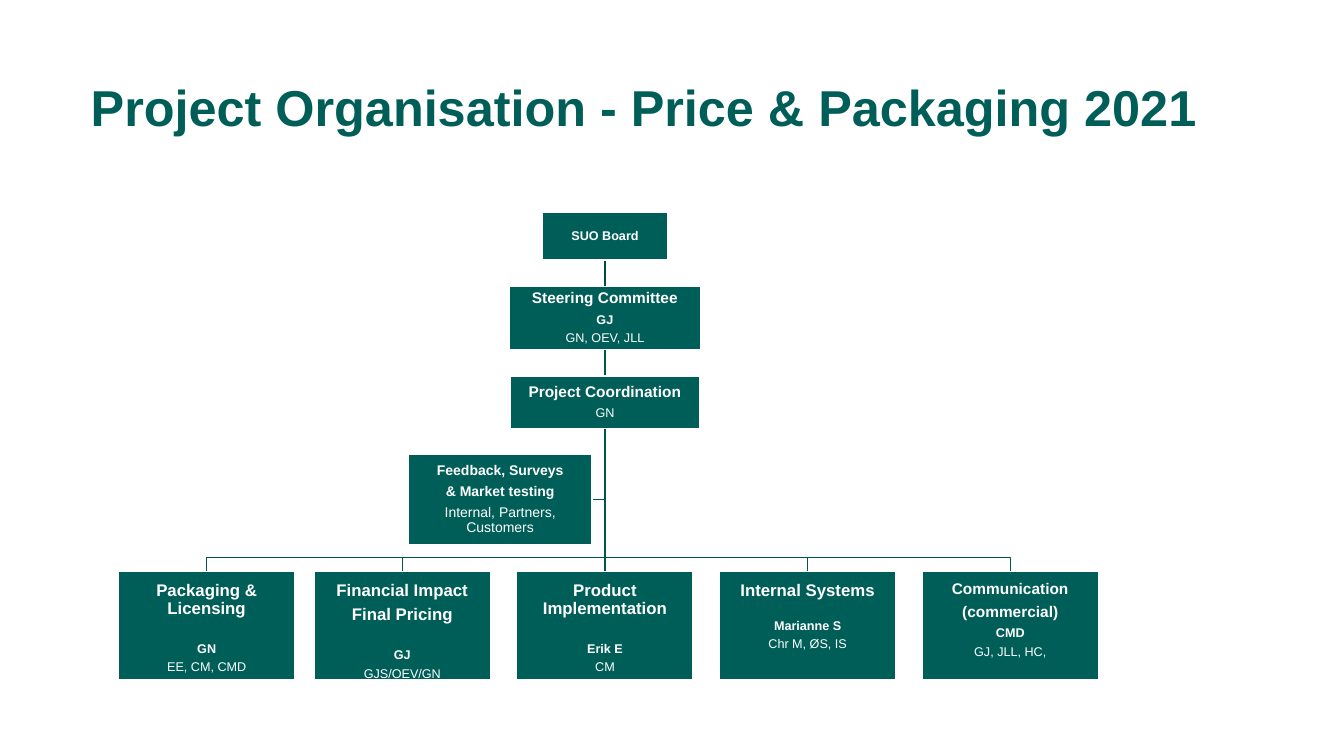
"""Build the project organisation chart slide."""
from dataclasses import dataclass
from typing import Any

import lxml.etree
import pptx
import pptx.dml.color
import pptx.enum.shapes
import pptx.enum.text
import pptx.oxml.ns
import pptx.util

Inches = pptx.util.Inches
Pt = pptx.util.Pt
ALIGN = pptx.enum.text.PP_ALIGN
ANCHOR = pptx.enum.text.MSO_ANCHOR

GREEN, EDGE, DEEP, WHITE = "005E58", "005550", "004B46", "FFFFFF"
AXIS = 6.0
BUS = 5.53
TOP, WIDE, HIGH = 5.67, 1.75, 1.07
BLANK = 12.9
SIDES = ("left", "top", "right", "bottom")


@dataclass
class Line:
    """One paragraph, with any gap above it in points."""
    text: str
    size: int = 9
    bold: bool = False
    gap: float = 0


@dataclass
class Box:
    """One unit of the chart, placed by its centre line and top."""
    mid: float
    top: float
    width: float
    height: float
    lines: list[Line]
    pad: float = 0.01
    anchor: Any = ANCHOR.MIDDLE


def leaf(mid: float, *lines: Line) -> Box:
    """Describe a unit of the bottom row."""
    return Box(mid, TOP, WIDE, HIGH, list(lines), 0.1, ANCHOR.TOP)


BOARD = Box(AXIS, 2.11, 1.25, 0.47, [Line("SUO Board", 9, True)])
STEER = Box(AXIS, 2.84, 1.9, 0.63, [
    Line("Steering Committee", 11, True), Line("GJ", 9, True), Line("GN, OEV, JLL")])
COORD = Box(AXIS, 3.73, 1.88, 0.52, [Line("Project Coordination", 11, True), Line("GN")])
SURVEY = Box(4.96, 4.51, 1.82, 0.89, [
    Line("Feedback, Surveys", 10, True), Line("& Market testing", 10, True),
    Line("Internal, Partners, Customers", 10)])
PRODUCT = leaf(AXIS, Line("Product Implementation", 12, True),
               Line("Erik E", 9, True, BLANK), Line("CM"))
WINGS = [
    leaf(2.05, Line("Packaging & Licensing", 12, True),
         Line("GN", 9, True, BLANK), Line("EE, CM, CMD")),
    leaf(3.99, Line("Financial Impact", 12, True), Line("Final Pricing", 12, True),
         Line("GJ", 9, True, BLANK), Line("GJS/OEV/GN")),
    leaf(8.01, Line("Internal Systems", 12, True),
         Line("Marianne S", 9, True, 9.3), Line("Chr M, ØS, IS")),
    leaf(10.02, Line("Communication", 11, True), Line("(commercial)", 11, True),
         Line("CMD", 9, True), Line("GJ, JLL, HC,")),
]


def style(item: Any, values: dict[str, Any]) -> None:
    """Set each named attribute on an object."""
    for name, value in values.items():
        setattr(item, name, value)


def paint(form: Any, color: str) -> None:
    """Give a fill, line or font format a solid hex colour."""
    if hasattr(form, "solid"):
        form.solid()
        form = form.fore_color
    else:
        form = form.color
    form.rgb = pptx.dml.color.RGBColor.from_string(color)


def stroke(shape: Any, color: str) -> None:
    """Give a shape a one point outline."""
    paint(shape.line, color)
    shape.line.width = Pt(1)


def write(para: Any, line: Line, color: str, align: Any) -> None:
    """Fill and format one paragraph."""
    para.text = line.text
    style(para, {"alignment": align, "line_spacing": 0.9,
                 "space_before": Pt(line.gap), "space_after": Pt(0.39 * line.size)})
    style(para.font, {"name": "Arial", "size": Pt(line.size), "bold": line.bold})
    paint(para.font, color)


def draw(slide: Any, box: Box) -> Any:
    """Draw a unit with its text."""
    shape = slide.shapes.add_shape(
        pptx.enum.shapes.MSO_SHAPE.RECTANGLE, Inches(box.mid - box.width / 2),
        Inches(box.top), Inches(box.width), Inches(box.height))
    shape.shadow.inherit = False
    paint(shape.fill, GREEN)
    stroke(shape, WHITE)
    frame = shape.text_frame
    style(frame, {"word_wrap": True, "vertical_anchor": box.anchor})
    style(frame, {f"margin_{side}": Inches(box.pad) for side in SIDES})
    for rank, line in enumerate(box.lines):
        para = frame.add_paragraph() if rank else frame.paragraphs[0]
        write(para, line, WHITE, ALIGN.CENTER)
    return shape


def link(slide: Any, color: str, upper: Any, lower: Any, site: int = 0) -> None:
    """Join two units, or the trunk and a unit, behind the boxes."""
    start = Inches(AXIS), lower.top + lower.height // 2
    wire = slide.shapes.add_connector(
        pptx.enum.shapes.MSO_CONNECTOR.STRAIGHT, *start, *start)
    if upper is not None:
        wire.begin_connect(upper, 2)
    wire.end_connect(lower, site)
    stroke(wire, color)
    lxml.etree.SubElement(wire._element.spPr, pptx.oxml.ns.qn("a:effectLst"))
    slide.shapes._spTree.insert(2, wire._element)


def branch(slide: Any, mid: float) -> None:
    """Draw the bent line from the trunk to a unit of the bottom row."""
    path = slide.shapes.build_freeform(
        Inches(AXIS), Inches(COORD.top + COORD.height), scale=1.0)
    path.add_line_segments([(Inches(x), Inches(y)) for x, y in
                            ((AXIS, BUS), (mid, BUS), (mid, TOP))], close=False)
    shape = path.convert_to_shape()
    shape.shadow.inherit = False
    shape.fill.background()
    stroke(shape, EDGE)


def head(slide: Any) -> None:
    """Place and format the title."""
    title = slide.shapes.title
    style(title, {"left": Inches(0.8), "top": Inches(0.37),
                  "width": Inches(12.13), "height": Inches(0.99)})
    style(title.text_frame, {"word_wrap": True, "margin_bottom": 0,
                             "vertical_anchor": ANCHOR.BOTTOM,
                             "auto_size": pptx.enum.text.MSO_AUTO_SIZE.NONE})
    para = title.text_frame.paragraphs[0]
    write(para, Line("Project Organisation - Price & Packaging 2021", 36, True),
          GREEN, ALIGN.LEFT)
    para.space_after = Pt(0)


def main() -> None:
    """Build and save the slide."""
    deck = pptx.Presentation()
    style(deck, {"slide_width": Inches(13.33), "slide_height": Inches(7.5)})
    slide = deck.slides.add_slide(deck.slide_layouts[5])
    head(slide)
    for wing in WINGS:
        branch(slide, wing.mid)
    board, steer, coord, survey, product = (
        draw(slide, box) for box in (BOARD, STEER, COORD, SURVEY, PRODUCT))
    for wing in WINGS:
        draw(slide, wing)
    link(slide, DEEP, board, steer)
    link(slide, EDGE, steer, coord)
    link(slide, EDGE, coord, product)
    link(slide, EDGE, None, survey, 3)
    deck.save("out.pptx")


if __name__ == "__main__":
    main()
